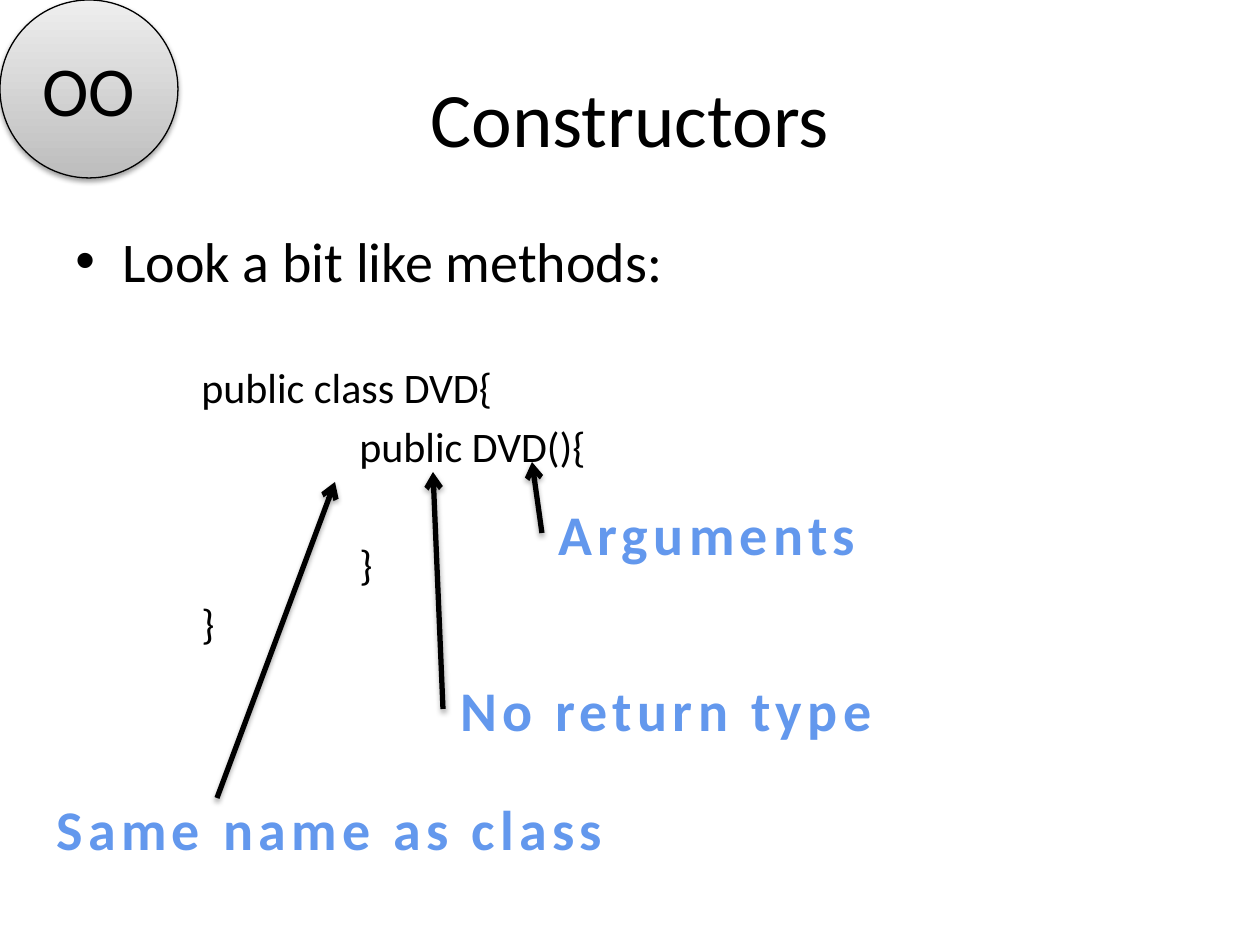
from lxml.etree import SubElement
from pptx import Presentation
from pptx.dml.color import RGBColor
from pptx.enum.shapes import MSO_CONNECTOR, MSO_SHAPE
from pptx.enum.text import MSO_ANCHOR, MSO_AUTO_SIZE, PP_ALIGN
from pptx.oxml import parse_xml
from pptx.oxml.ns import nsdecls, qn
from pptx.util import Pt

SCALE = 914400 // 126
FONT = "Calibri"
COLORS = {
    "text": "000000", "label_top": "6398ED", "label_bottom": "265EA0",
    "label_outline": "F4F6F9", "label_shadow": "A6CFFF",
    "badge_dark": "BDBDBD", "badge_light": "EEEEEE",
}


def px(length):
    """Turn pixels into EMU."""
    return int(length * SCALE)


def color(name):
    """Look up a named colour."""
    return RGBColor.from_string(COLORS[name])


def style(paragraph, size, align=PP_ALIGN.LEFT):
    """Set the alignment and font of a paragraph's runs."""
    paragraph.alignment = align
    for span in paragraph.runs:
        span.font.name, span.font.size = FONT, Pt(size)
        span.font.color.rgb = color("text")


def set_gradient(fill, stops, angle):
    """Apply a two-stop linear gradient."""
    fill.gradient()
    fill.gradient_angle = angle
    for stop, (position, name) in zip(fill.gradient_stops, stops):
        stop.position, stop.color.rgb = position, color(name)


def shadow_effect(name, alpha, blur, distance, direction):
    """Build an effect list holding one outer shadow."""
    return parse_xml(
        f'<a:effectLst {nsdecls("a")}><a:outerShdw blurRad="{Pt(blur)}" '
        f'dist="{Pt(distance)}" dir="{direction * 60000}" rotWithShape="0">'
        f'<a:srgbClr val="{COLORS[name]}"><a:alpha val="{alpha * 1000}"/>'
        f'</a:srgbClr></a:outerShdw></a:effectLst>')


def add_title(page, box, text):
    """Place the centred slide title."""
    title = page.shapes.title
    title.left, title.top, title.width, title.height = map(px, box)
    title.text_frame.text = text
    title.text_frame.vertical_anchor = MSO_ANCHOR.MIDDLE
    style(title.text_frame.paragraphs[0], 44, PP_ALIGN.CENTER)


def add_body(page, box, lines):
    """Write the bullet and the indented code under it."""
    frame = page.shapes.add_textbox(*map(px, box)).text_frame
    frame.word_wrap = True
    for index, (text, size, indent, before, bullet) in enumerate(lines):
        paragraph = frame.add_paragraph() if index else frame.paragraphs[0]
        paragraph.text = text
        paragraph.space_before = Pt(before)
        style(paragraph, size)
        properties = paragraph._p.get_or_add_pPr()
        properties.set("marL", str(px(indent)))
        if bullet:
            properties.set("indent", str(-px(indent)))
            SubElement(properties, qn("a:buFont"), typeface="Arial")
            SubElement(properties, qn("a:buChar"), char="•")


def add_label(page, box, text):
    """Add a spaced, outlined gradient label."""
    label = page.shapes.add_textbox(*map(px, box))
    frame = label.text_frame
    frame.text = text
    frame.word_wrap = False
    frame.auto_size = MSO_AUTO_SIZE.SHAPE_TO_FIT_TEXT
    style(frame.paragraphs[0], 32, PP_ALIGN.CENTER)
    span = frame.paragraphs[0].runs[0]
    span.font.bold = True
    set_gradient(span.font.fill, [(0.1, "label_top"), (0.75, "label_bottom")], 270)
    properties = span.font._element
    properties.set("spc", "300")
    properties.insert(0, parse_xml(
        f'<a:ln {nsdecls("a")} w="{Pt(0.9)}"><a:solidFill><a:srgbClr '
        f'val="{COLORS["label_outline"]}"/></a:solidFill></a:ln>'))
    properties.insert(2, shadow_effect("label_shadow", 100, 0, 2, 45))
    return label


def add_arrow(page, start, end, label=None):
    """Draw a shadowed arrow, joined to a label's left side if given."""
    arrow = page.shapes.add_connector(MSO_CONNECTOR.STRAIGHT, *map(px, start + end))
    if label is not None:
        arrow.begin_connect(label, 1)
    arrow.line.color.rgb = color("text")
    arrow.line.width = Pt(3)
    SubElement(arrow.line._get_or_add_ln(), qn("a:tailEnd"), type="arrow")
    arrow._element.spPr.append(shadow_effect("text", 35, 3.1, 1.8, 90))


def add_badge(page, box, text):
    """Add the round corner badge."""
    badge = page.shapes.add_shape(MSO_SHAPE.OVAL, *map(px, box))
    set_gradient(badge.fill, [(0, "badge_dark"), (1, "badge_light")], 90)
    badge.line.color.rgb = color("text")
    badge.line.width = Pt(0.75)
    badge._element.spPr.append(shadow_effect("text", 38, 3.1, 1.6, 90))
    badge.text_frame.text = text
    badge.text_frame.vertical_anchor = MSO_ANCHOR.MIDDLE
    style(badge.text_frame.paragraphs[0], 40, PP_ALIGN.CENTER)


def main():
    """Build and save the slide."""
    deck = Presentation()
    deck.slide_width, deck.slide_height = px(1260), px(945)
    page = deck.slides.add_slide(deck.slide_layouts[5])
    add_title(page, (63, 38, 1134, 157), "Constructors")
    add_body(page, (63, 220, 1134, 624), [
        ("Look a bit like methods:", 32, 47, 6.4, True),
        ("public class DVD{", 24, 126, 38.9, False),
        ("public DVD(){", 24, 284, 4.8, False),
        ("}", 24, 284, 38.9, False),
        ("}", 24, 126, 4.8, False),
    ])
    arguments = add_label(page, (542, 493, 330, 80), "Arguments")
    add_arrow(page, (542, 533), (532, 462), arguments)
    return_type = add_label(page, (443, 669, 446, 80), "No return type")
    add_arrow(page, (443, 709), (433, 472), return_type)
    add_label(page, (39, 788, 582, 80), "Same name as class")
    add_arrow(page, (217, 798), (335, 482))
    add_badge(page, (0, 0, 178, 178), "OO")
    deck.save("out.pptx")


if __name__ == "__main__":
    main()
